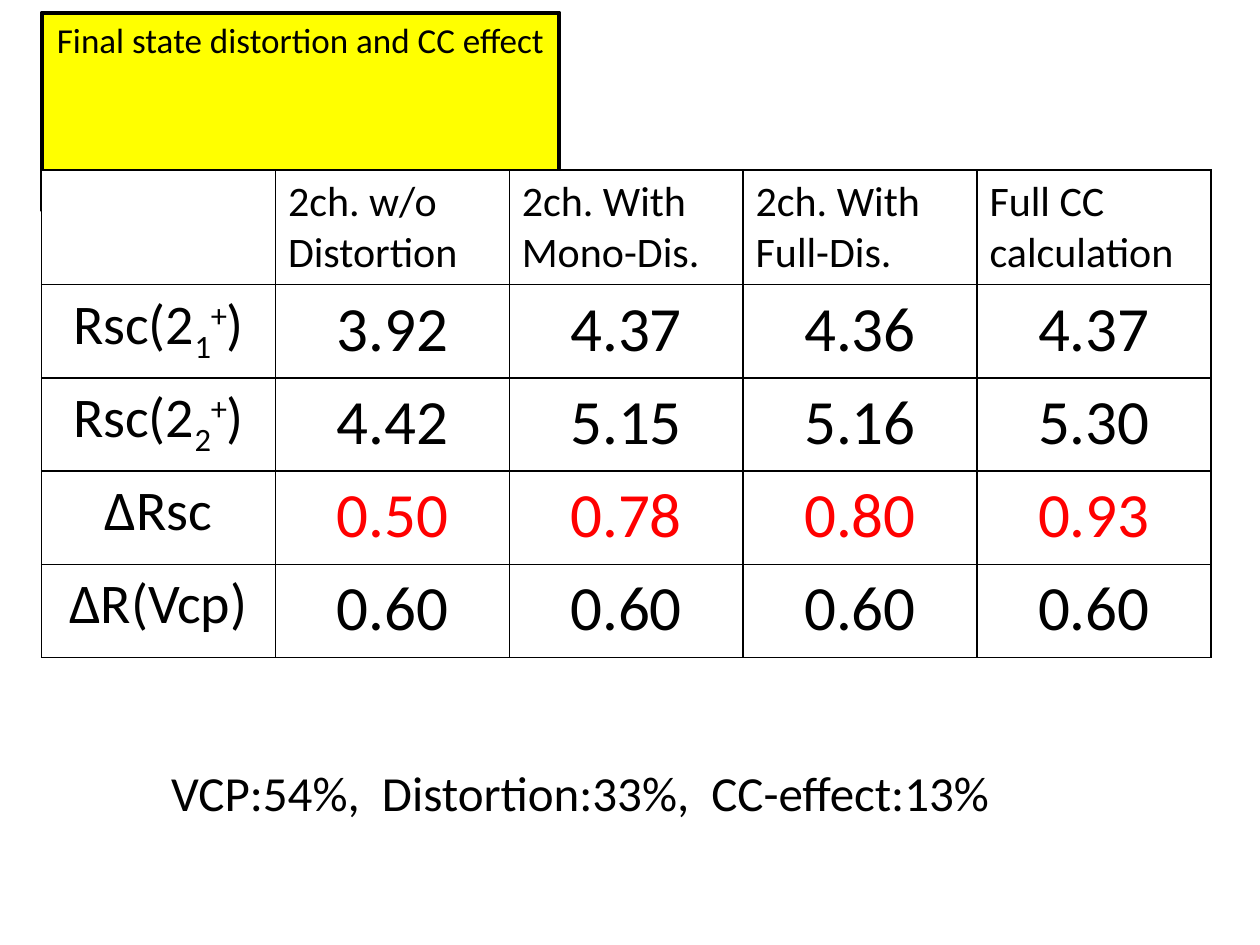
from dataclasses import dataclass

from lxml.etree import SubElement
from pptx import Presentation
from pptx.dml.color import RGBColor
from pptx.enum.text import MSO_ANCHOR, MSO_AUTO_SIZE, PP_ALIGN
from pptx.oxml.ns import qn
from pptx.util import Inches, Pt


@dataclass(frozen=True)
class Theme:
    font: str = "Calibri"
    ink: str = "000000"
    accent: str = "FF0000"
    paper: str = "FFFFFF"
    banner: str = "FFFF00"
    title_size: int = 20
    header_size: int = 24
    summary_size: int = 28
    label_size: int = 32
    value_size: int = 36
    banner_line: float = 2.25
    grid_line: float = 1


THEME = Theme()
SUBSCRIPT, SUPERSCRIPT = -25, 30


def write(frame, text, size, color=THEME.ink, align=PP_ALIGN.LEFT):
    lines = text if isinstance(text, list) else [text]
    for index, line in enumerate(lines):
        paragraph = frame.add_paragraph() if index else frame.paragraphs[0]
        paragraph.alignment = align
        for part in [line] if isinstance(line, str) else line:
            words, baseline = (part, 0) if isinstance(part, str) else part
            run = paragraph.add_run()
            run.text = words
            run.font.name = THEME.font
            run.font.size = Pt(size)
            run.font.color.rgb = RGBColor.from_string(color)
            if baseline:
                run.font._element.set("baseline", str(baseline * 1000))


class SlideBuilder:
    def __init__(self, slide, theme):
        self.slide = slide
        self.theme = theme

    def title(self, text, left, top, width, height):
        banner = self.slide.shapes.title
        banner.left, banner.top = Inches(left), Inches(top)
        banner.width, banner.height = Inches(width), Inches(height)
        banner.fill.solid()
        banner.fill.fore_color.rgb = RGBColor.from_string(self.theme.banner)
        banner.line.color.rgb = RGBColor.from_string(self.theme.ink)
        banner.line.width = Pt(self.theme.banner_line)
        frame = banner.text_frame
        frame.word_wrap = False
        frame.auto_size = MSO_AUTO_SIZE.SHAPE_TO_FIT_TEXT
        frame.vertical_anchor = MSO_ANCHOR.TOP
        write(frame, text, self.theme.title_size, align=PP_ALIGN.CENTER)

    def summary(self, text, left, top, width, height):
        frame = self.slide.shapes.add_textbox(
            Inches(left), Inches(top), Inches(width), Inches(height)
        ).text_frame
        frame.word_wrap = False
        frame.auto_size = MSO_AUTO_SIZE.SHAPE_TO_FIT_TEXT
        write(frame, text, self.theme.summary_size)

    def grid_cell(self, cell):
        properties = cell._tc.get_or_add_tcPr()
        for side in ("a:lnL", "a:lnR", "a:lnT", "a:lnB"):
            border = SubElement(properties, qn(side), w=str(Pt(self.theme.grid_line)))
            fill = SubElement(border, qn("a:solidFill"))
            SubElement(fill, qn("a:srgbClr"), val=self.theme.ink)
        cell.fill.solid()
        cell.fill.fore_color.rgb = RGBColor.from_string(self.theme.paper)

    def results_table(self, headers, rows, left, top, width, header_height, row_height):
        height = header_height + row_height * len(rows)
        table = self.slide.shapes.add_table(
            len(rows) + 1, len(headers) + 1,
            Inches(left), Inches(top), Inches(width), Inches(height),
        ).table
        table.first_row = table.horz_banding = False
        for index, row in enumerate(table.rows):
            row.height = Inches(row_height if index else header_height)
        for cell in table.iter_cells():
            self.grid_cell(cell)
        for column, header in enumerate(headers, 1):
            write(table.cell(0, column).text_frame, header, self.theme.header_size)
        for index, (label, values, color) in enumerate(rows, 1):
            write(table.cell(index, 0).text_frame, [label],
                  self.theme.label_size, align=PP_ALIGN.CENTER)
            for column, value in enumerate(values, 1):
                write(table.cell(index, column).text_frame, value,
                      self.theme.value_size, color=color, align=PP_ALIGN.CENTER)


def radius_label(state):
    return ["Rsc(2", (state, SUBSCRIPT), ("+", SUPERSCRIPT), ")"]


def main():
    presentation = Presentation()
    presentation.slide_width, presentation.slide_height = Inches(10), Inches(7.5)
    title_only = presentation.slide_layouts[5]
    builder = SlideBuilder(presentation.slides.add_slide(title_only), THEME)

    headers = [
        ["2ch. w/o", "Distortion"],
        ["2ch. With", "Mono-Dis."],
        ["2ch. With", "Full-Dis."],
        ["Full CC", "calculation"],
    ]
    rows = [
        (radius_label("1"), ["3.92", "4.37", "4.36", "4.37"], THEME.ink),
        (radius_label("2"), ["4.42", "5.15", "5.16", "5.30"], THEME.ink),
        ("ΔRsc", ["0.50", "0.78", "0.80", "0.93"], THEME.accent),
        ("ΔR(Vcp)", ["0.60"] * len(headers), THEME.ink),
    ]
    builder.title("Final state distortion and CC effect", 0.33, 0.1, 4.11, 0.44)
    builder.results_table(headers, rows, left=0.33, top=1.35, width=9.28,
                          header_height=0.91, row_height=0.74)
    builder.summary("VCP:54%,  Distortion:33%,  CC-effect:13%", 1.26, 6, 6.78, 0.57)
    presentation.save("out.pptx")


if __name__ == "__main__":
    main()
